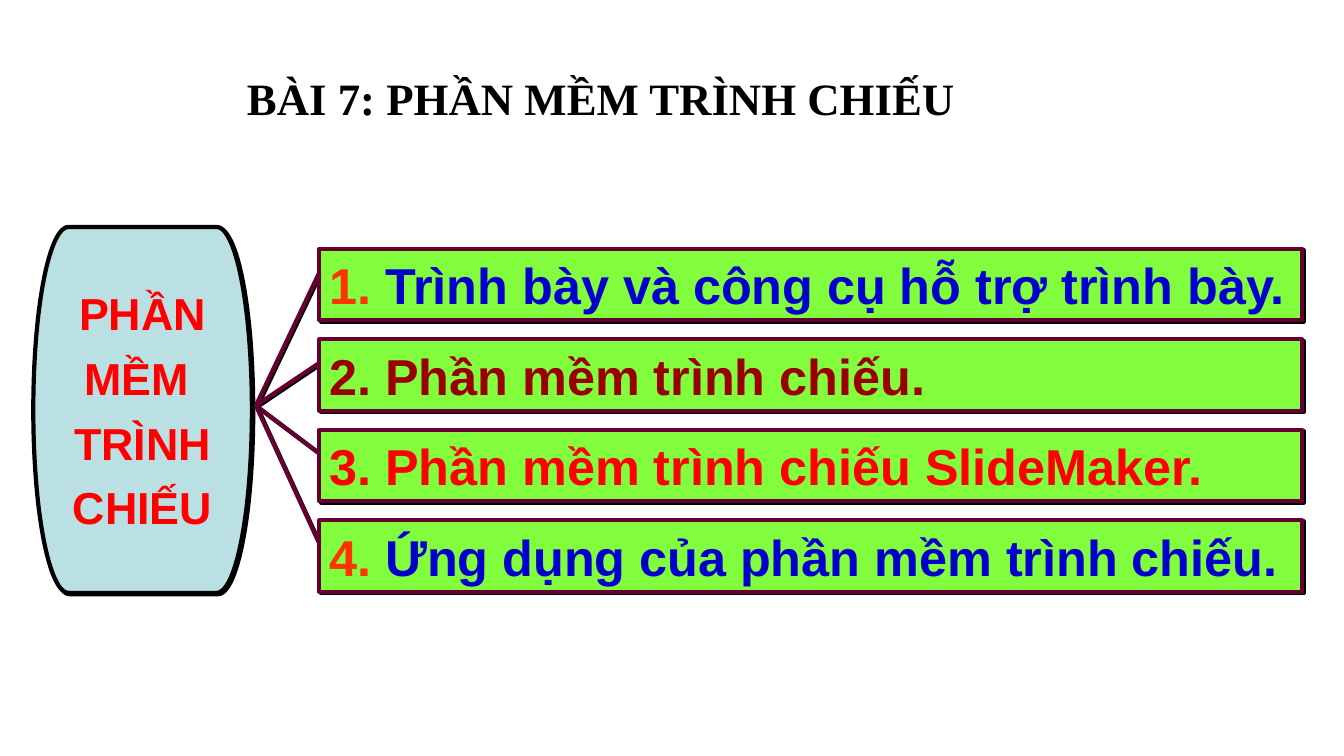
from lxml.etree import SubElement
from pptx import Presentation
from pptx.dml.color import RGBColor
from pptx.enum.shapes import MSO_SHAPE as Preset
from pptx.enum.text import MSO_ANCHOR as Anchor, PP_ALIGN as Align
from pptx.oxml.ns import qn
from pptx.util import Cm, Pt

COLORS = {
    "black": "000000",
    "pale_blue": "BBE0E3",
    "green": "82FD3D",
    "plum": "660033",
    "orange": "FF3300",
    "red": "FF0000",
    "dark_red": "9A0000",
    "blue": "0000CC",
}

TOPIC_LINES = ["PHẦN", "MỀM ", "TRÌNH", "CHIẾU"]
SECTIONS = [
    [("1. ", "orange"), ("Trình bày và công cụ hỗ trợ trình bày.", "blue")],
    [("2. Phần mềm trình chiếu.", "dark_red")],
    [("3. Phần mềm trình chiếu SlideMaker.", "red")],
    [("4. ", "orange"), ("Ứng dụng của phần mềm trình chiếu.", "blue")],
]
SECTION_LEFT, SECTION_TOP, SECTION_WIDTH, SECTION_HEIGHT = 8.05, 6.27, 24.77, 1.8
SECTION_PITCH = 2.28
HUB_X, HUB_Y = 6.45, 10.22


def color(name):
    return RGBColor.from_string(COLORS[name])


class SlideBuilder:
    def __init__(self, slide):
        self.slide = slide
        self.body_font = "Arial"
        self.title_font = "Times New Roman"

    def add_run(self, paragraph, text, size, color_name, font_name):
        run = paragraph.add_run()
        run.text = text
        run.font.name = font_name
        run.font.size = Pt(size)
        run.font.bold = True
        run.font.color.rgb = color(color_name)

    def add_hard_shadow(self, shape):
        """Give the shape an unblurred black shadow down to the right."""
        shape.shadow.inherit = False
        effects = shape._element.spPr.find(qn("a:effectLst"))
        shadow = SubElement(effects, qn("a:outerShdw"), dist=str(Pt(1.4)),
                            dir="2700000", algn="ctr", rotWithShape="0")
        SubElement(shadow, qn("a:srgbClr"), val=COLORS["black"])

    def add_box(self, preset, left, top, width, height, fill, line):
        shape = self.slide.shapes.add_shape(
            preset, Cm(left), Cm(top), Cm(width), Cm(height))
        shape.fill.solid()
        shape.fill.fore_color.rgb = color(fill)
        shape.line.color.rgb = color(line)
        shape.line.width = Pt(3)
        self.add_hard_shadow(shape)
        shape.text_frame.word_wrap = True
        shape.text_frame.vertical_anchor = Anchor.MIDDLE
        return shape

    def add_title(self, text):
        title = self.slide.shapes.title
        title.left, title.top = Cm(5.97), Cm(1.65)
        title.width, title.height = Cm(22.23), Cm(1.63)
        title.text_frame.vertical_anchor = Anchor.TOP
        paragraph = title.text_frame.paragraphs[0]
        paragraph.alignment = Align.LEFT
        self.add_run(paragraph, text, 32, "black", self.title_font)

    def add_topic(self, lines):
        frame = self.add_box(Preset.FLOWCHART_TERMINATOR, 0.84, 5.72, 5.51, 9.22,
                             "pale_blue", "black").text_frame
        for index, line in enumerate(lines):
            paragraph = frame.add_paragraph() if index else frame.paragraphs[0]
            paragraph.alignment = Align.CENTER
            paragraph.space_before = Pt(7.7)
            self.add_run(paragraph, line, 32, "red", self.body_font)

    def add_section(self, top, runs):
        """Add a section bar whose callout line ends at the hub."""
        shape = self.add_box(Preset.LINE_CALLOUT_1, SECTION_LEFT, top,
                             SECTION_WIDTH, SECTION_HEIGHT, "green", "plum")
        line_ends = (0.33, 0, (HUB_Y - top) / SECTION_HEIGHT,
                     (HUB_X - SECTION_LEFT) / SECTION_WIDTH)
        for index, value in enumerate(line_ends):
            shape.adjustments[index] = value
        paragraph = shape.text_frame.paragraphs[0]
        paragraph.alignment = Align.LEFT
        for text, color_name in runs:
            self.add_run(paragraph, text, 36, color_name, self.body_font)


def main():
    presentation = Presentation()
    presentation.slide_width, presentation.slide_height = Cm(33.87), Cm(19.05)
    title_only = presentation.slide_layouts[5]
    builder = SlideBuilder(presentation.slides.add_slide(title_only))
    builder.add_title("BÀI 7: PHẦN MỀM TRÌNH CHIẾU")
    builder.add_topic(TOPIC_LINES)
    for index, runs in enumerate(SECTIONS):
        builder.add_section(SECTION_TOP + index * SECTION_PITCH, runs)
    presentation.save("out.pptx")


if __name__ == "__main__":
    main()
